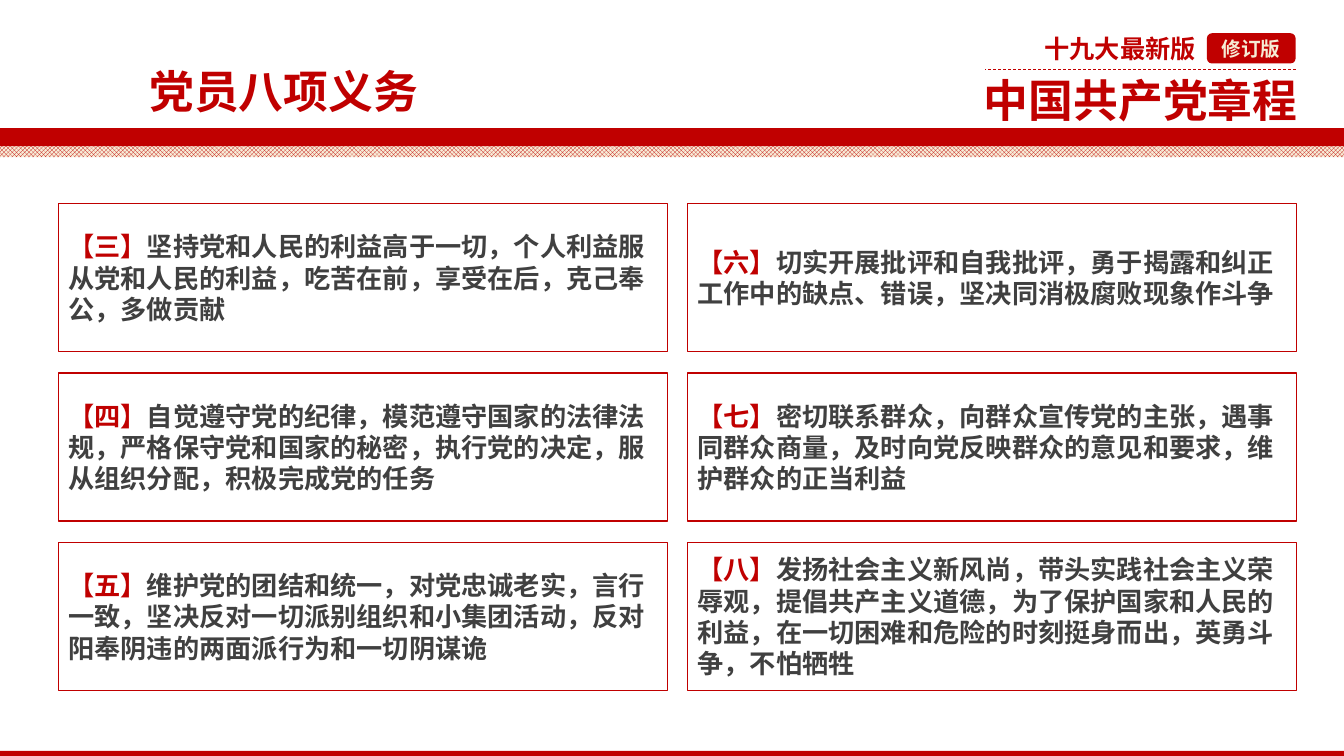
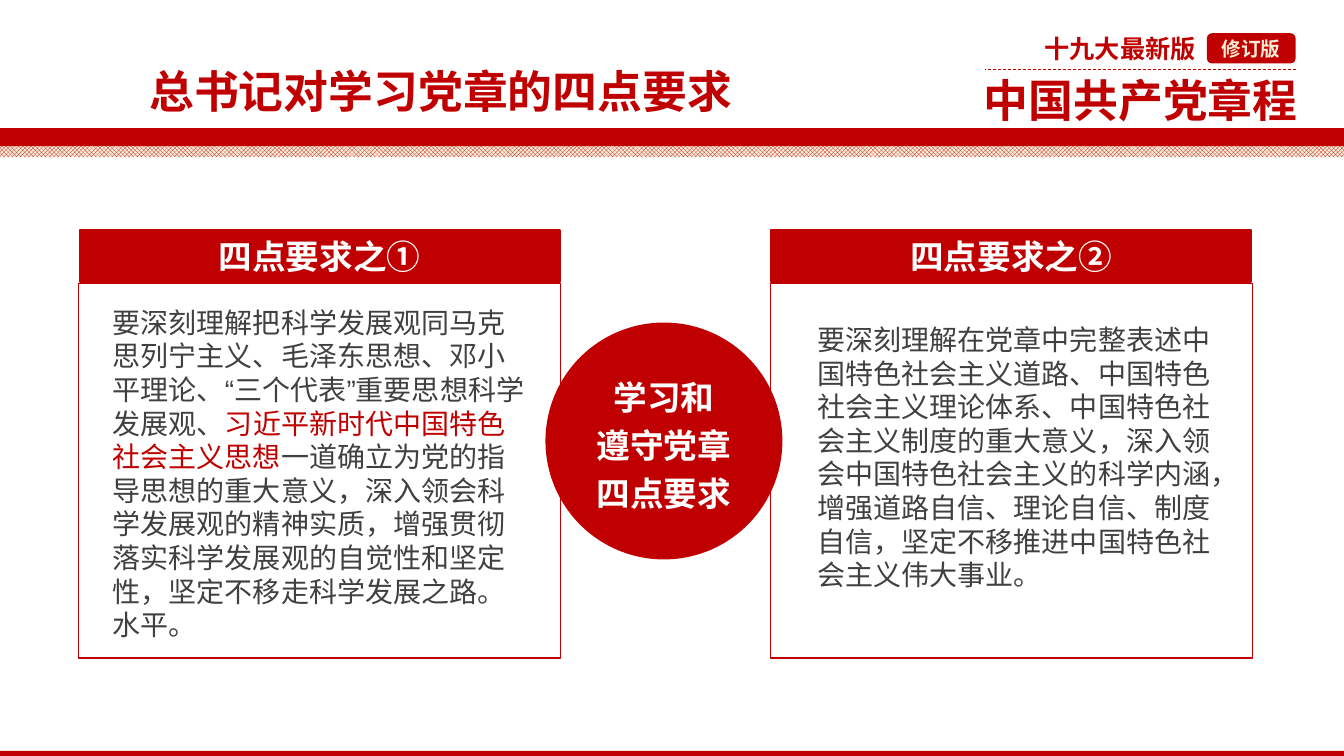
from lxml import etree
from pptx import Presentation
from pptx.dml.color import RGBColor
from pptx.enum.dml import MSO_LINE, MSO_PATTERN
from pptx.enum.shapes import MSO_CONNECTOR, MSO_SHAPE
from pptx.enum.text import MSO_ANCHOR, MSO_AUTO_SIZE, PP_ALIGN
from pptx.oxml.ns import qn
from pptx.util import Inches, Pt

RED = RGBColor(0xC0, 0x00, 0x00)
CREAM = RGBColor(0xF6, 0xED, 0xD6)
PALE = RGBColor(0xF7, 0xED, 0xD8)
GRAY = RGBColor(0x40, 0x40, 0x40)
WHITE = RGBColor(0xFF, 0xFF, 0xFF)

RECTANGLE, ROUNDED, OVAL = MSO_SHAPE.RECTANGLE, MSO_SHAPE.ROUNDED_RECTANGLE, MSO_SHAPE.OVAL
STRAIGHT, DASH, TRELLIS = MSO_CONNECTOR.STRAIGHT, MSO_LINE.DASH, MSO_PATTERN.TRELLIS
LEFT, CENTER, RIGHT = PP_ALIGN.LEFT, PP_ALIGN.CENTER, PP_ALIGN.RIGHT
TOP, MIDDLE = MSO_ANCHOR.TOP, MSO_ANCHOR.MIDDLE
NO_FIT, GROW = MSO_AUTO_SIZE.NONE, MSO_AUTO_SIZE.SHAPE_TO_FIT_TEXT

BODY_FONT = "Arial"
BRAND_FONT = "Noto Sans CJK SC"
TITLE_ONLY = 5
SLIDE_WIDTH = 13.33


class Deck:
    """Holds the presentation, its style and the page being drawn."""

    def __init__(self):
        self.deck = Presentation()
        self.deck.slide_width = Inches(SLIDE_WIDTH)
        self.deck.slide_height = Inches(7.5)
        self.page = None

    def new_page(self, title):
        self.page = self.deck.slides.add_slide(self.deck.slide_layouts[TITLE_ONLY])
        self.masthead()
        box = self.page.shapes.title
        box.left, box.top = Inches(1.38), Inches(0.43)
        box.width, box.height = Inches(6.67), Inches(0.84)
        box.text_frame.auto_size = NO_FIT
        self.set_text(box, [[(title, RED)]], 32, bold=True, spacing=1.2)

    def masthead(self):
        self.text(8.45, 0.67, 4.52, 0.64, [("中国共产党章程", RED)], 32,
                  align=RIGHT, bold=True, font=BRAND_FONT)
        self.text(10.12, 0.28, 1.98, 0.4, [("十九大最新版", RED)], 18,
                  align=CENTER, bold=True, font=BRAND_FONT)
        tag = self.shape(ROUNDED, 11.97, 0.33, 0.88, 0.3, fill=RED)
        self.set_text(tag, [[("修订版", CREAM)]], 14, align=CENTER, bold=True, font=BRAND_FONT)
        self.dashed_line(12.85, 9.77, 0.69)
        mesh = self.shape(RECTANGLE, 0, 1.43, SLIDE_WIDTH, 0.13)
        mesh.fill.patterned()
        mesh.fill.pattern = TRELLIS
        mesh.fill.fore_color.rgb = RED
        mesh.fill.back_color.rgb = PALE
        for top, height in ((1.27, 0.18), (7.45, 0.05)):
            self.shape(RECTANGLE, 0, top, SLIDE_WIDTH, height, fill=RED)

    def shape(self, kind, left, top, width, height, fill=None, line_width=None):
        shape = self.page.shapes.add_shape(
            kind, Inches(left), Inches(top), Inches(width), Inches(height))
        shape.shadow.inherit = False
        if fill is None:
            shape.fill.background()
        else:
            shape.fill.solid()
            shape.fill.fore_color.rgb = fill
        if line_width is None:
            shape.line.fill.background()
        else:
            shape.line.color.rgb = RED
            shape.line.width = Pt(line_width)
        return shape

    def dashed_line(self, start, end, top):
        connector = self.page.shapes.add_connector(
            STRAIGHT, Inches(start), Inches(top), Inches(end), Inches(top))
        connector.line.color.rgb = RED
        connector.line.width = Pt(0.5)
        connector.line.dash_style = DASH
        properties = connector.element.find(qn("p:spPr"))
        etree.SubElement(properties, qn("a:effectLst"))

    def text(self, left, top, width, height, spans, size, **style):
        box = self.page.shapes.add_textbox(
            Inches(left), Inches(top), Inches(width), Inches(height))
        self.set_text(box, [spans], size, anchor=TOP, **style)
        box.text_frame.auto_size = GROW

    def set_text(self, box, paras, size, align=LEFT, anchor=MIDDLE, bold=False,
                 font=BODY_FONT, spacing=None):
        """Fill a box with paragraphs, each a list of (words, colour) spans."""
        frame = box.text_frame
        frame.word_wrap = True
        frame.vertical_anchor = anchor
        for index, spans in enumerate(paras):
            para = frame.add_paragraph() if index else frame.paragraphs[0]
            para.alignment = align
            para.line_spacing = spacing
            for words, color in spans:
                span = para.add_run()
                span.text = words
                span.font.size = Pt(size)
                span.font.bold = bold
                span.font.color.rgb = color
                span.font.name = font
                east_asian = etree.SubElement(span._r.get_or_add_rPr(), qn("a:ea"))
                east_asian.set("typeface", font)

    def duty(self, left, top, number, words):
        box = self.shape(RECTANGLE, left, top, 6.04, 1.47, line_width=1)
        self.set_text(box, [[(f"【{number}】", RED), (words, GRAY)]], 18.7, bold=True)

    def panel(self, left, heading):
        header = self.shape(RECTANGLE, left, 2.28, 4.76, 0.52, fill=RED, line_width=1.5)
        self.set_text(header, [[(heading, WHITE)]], 24, align=CENTER, bold=True)
        self.shape(RECTANGLE, left - 0.01, 2.81, 4.78, 3.72, line_width=1)


DUTIES = [
    ("三", "坚持党和人民的利益高于一切，个人利益服从党和人民的利益，吃苦在前，享受在后，克己奉公，多做贡献"),
    ("四", "自觉遵守党的纪律，模范遵守国家的法律法规，严格保守党和国家的秘密，执行党的决定，"
           "服从组织分配，积极完成党的任务"),
    ("五", "维护党的团结和统一，对党忠诚老实，言行一致，坚决反对一切派别组织和小集团活动，"
           "反对阳奉阴违的两面派行为和一切阴谋诡"),
    ("六", "切实开展批评和自我批评，勇于揭露和纠正工作中的缺点、错误，坚决同消极腐败现象作斗争"),
    ("七", "密切联系群众，向群众宣传党的主张，遇事同群众商量，及时向党反映群众的意见和要求，"
           "维护群众的正当利益"),
    ("八", "发扬社会主义新风尚，带头实践社会主义荣辱观，提倡共产主义道德，为了保护国家和人民的利益，"
           "在一切困难和危险的时刻挺身而出，英勇斗争，不怕牺牲"),
]

FIRST_REQUIREMENT = [
    ("要深刻理解把科学发展观同马克思列宁主义、毛泽东思想、邓小平理论、“三个代表”重要思想科学发展观、", GRAY),
    ("习近平新时代中国特色社会主义思想", RED),
    ("一道确立为党的指导思想的重大意义，深入领会科学发展观的精神实质，"
     "增强贯彻落实科学发展观的自觉性和坚定性，坚定不移走科学发展之路。水平。", GRAY),
]
SECOND_REQUIREMENT = [
    ("要深刻理解在党章中完整表述中国特色社会主义道路、中国特色社会主义理论体系、"
     "中国特色社会主义制度的重大意义，深入领会中国特色社会主义的科学内涵，"
     "增强道路自信、理论自信、制度自信，坚定不移推进中国特色社会主义伟大事业。", GRAY),
]


def draw_duties(deck):
    deck.new_page("党员八项义务")
    for index, (number, words) in enumerate(DUTIES):
        column, row = divmod(index, 3)
        deck.duty(0.58 + 6.24 * column, 2.02 + 1.68 * row, number, words)


def draw_requirements(deck):
    deck.new_page("总书记对学习党章的四点要求")
    deck.panel(0.79, "四点要求之①")
    deck.panel(7.65, "四点要求之②")
    deck.text(1.02, 2.98, 4.3, 3.47, FIRST_REQUIREMENT, 20)
    deck.text(8.01, 3.15, 4.21, 2.79, SECOND_REQUIREMENT, 20)
    hub = deck.shape(OVAL, 5.41, 3.2, 2.35, 2.35, fill=RED)
    deck.set_text(hub, [[("学习和", WHITE)], [("遵守党章四点要求", WHITE)]], 24,
                  align=CENTER, bold=True, spacing=1.2)


def main():
    deck = Deck()
    draw_duties(deck)
    draw_requirements(deck)
    deck.deck.save("out.pptx")


if __name__ == "__main__":
    main()
